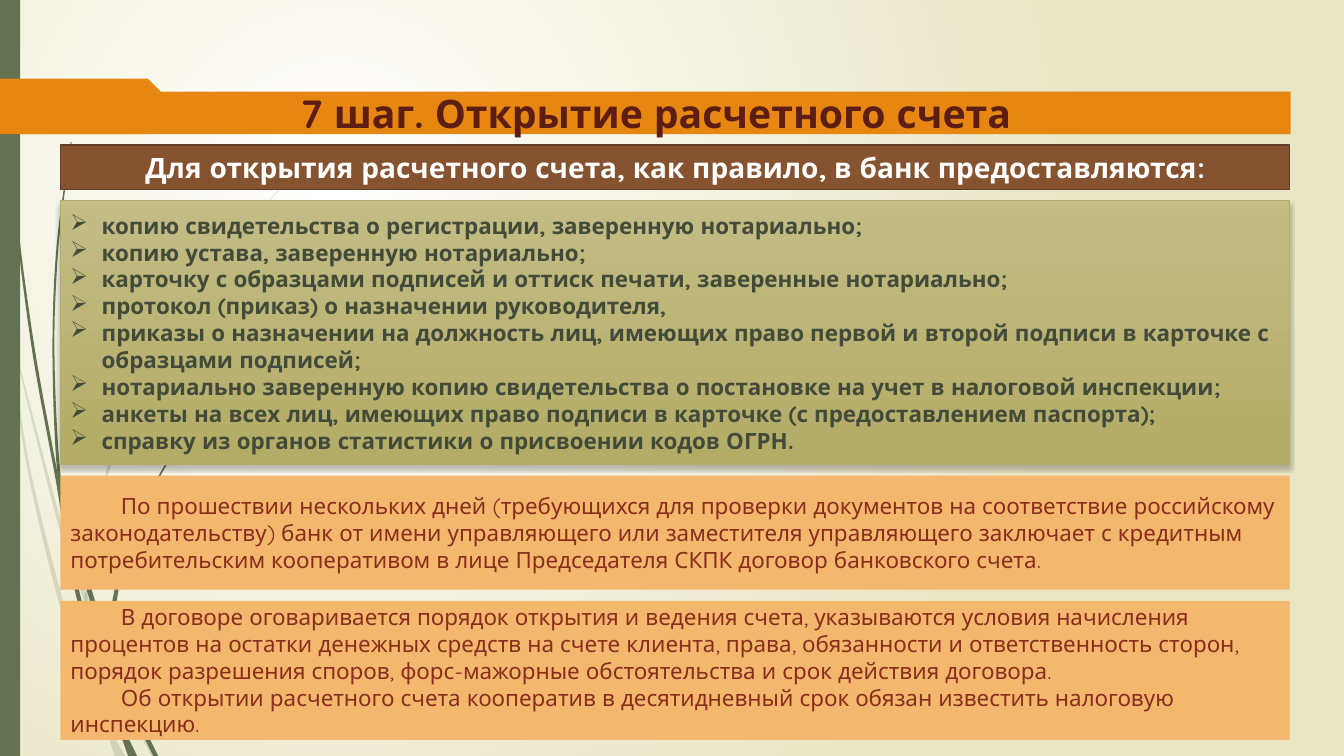
from lxml import etree
from pptx import Presentation
from pptx.dml.color import RGBColor
from pptx.enum.shapes import MSO_SHAPE
from pptx.enum.text import MSO_ANCHOR, PP_ALIGN
from pptx.oxml.ns import qn
from pptx.util import Emu, Inches, Pt

RECT = MSO_SHAPE.RECTANGLE
LEFT, CENTER = PP_ALIGN.LEFT, PP_ALIGN.CENTER
MIDDLE = MSO_ANCHOR.MIDDLE

WIDTH, HEIGHT = 13.33, 7.5
FONT, BULLET_FONT = "Quicksand", "OpenSymbol"
GREEN, ORANGE, PEACH = "647252", "E78712", "F4B76E"
BOX_LEFT, BOX_WIDTH, GAP = 0.6, 12.19, 0.11
FIRST_BOX_TOP = 1.44
UNITS, STEPS = 1000, 6

TITLE = "7 шаг. Открытие расчетного счета"
HEADING = "Для открытия расчетного счета, как правило, в банк предоставляются:"
DOCUMENTS = [
    "копию свидетельства о регистрации, заверенную нотариально;",
    "копию устава, заверенную нотариально;",
    "карточку с образцами подписей и оттиск печати, заверенные нотариально;",
    "протокол (приказ) о назначении руководителя,",
    "приказы о назначении на должность лиц, имеющих право первой и второй подписи в карточке с "
    "образцами подписей;",
    "нотариально заверенную копию свидетельства о постановке на учет в налоговой инспекции;",
    "анкеты на всех лиц, имеющих право подписи в карточке (с предоставлением паспорта);",
    "справку из органов статистики о присвоении кодов ОГРН.",
]
CONTRACT = [
    "По прошествии нескольких дней (требующихся для проверки документов на соответствие российскому "
    "законодательству) банк от имени управляющего или заместителя управляющего заключает с кредитным "
    "потребительским кооперативом в лице Председателя СКПК договор банковского счета.",
]
TERMS = [
    "В договоре оговаривается порядок открытия и ведения счета, указываются условия начисления "
    "процентов на остатки денежных средств на счете клиента, права, обязанности и ответственность "
    "сторон, порядок разрешения споров, форс-мажорные обстоятельства и срок действия договора.",
    "Об открытии расчетного счета кооператив в десятидневный срок обязан известить налоговую инспекцию.",
]

# Grass stems: joints (node numbers), then left edge, height and thickness at each node
PALE_STEMS = [
    ((1, 4), [(0, 2.82, 0.01), (0.11, 3.5, 0.01), (0.28, 4.7, 0.03), (0.65, 6.21, 0.05),
              (1.01, 7.14, 0.05), (1.14, 7.5, 0.1)]),
    ((2, 3), [(0.14, 3.45, 0.01), (0.58, 5.22, 0.04), (0.82, 5.92, 0.05), (0.88, 6.1, 0.05),
              (1.23, 6.94, 0.05), (1.5, 7.5, 0.05)]),
    ((), [(3.11, 1.53, 0.01), (2.68, 1.97, 0.01), (2.28, 2.44, 0.01), (1.58, 3.48, 0.02),
          (1.07, 4.61, 0.03), (0.85, 5.84, 0.03), (0.87, 5.96, 0.01)]),
]
DARK_STEMS = [
    ((4, 7), [(0.03, 0, 0.01), (0.06, 1.1, 0.02), (0.17, 2.33, 0.02), (0.33, 3.55, 0.03),
              (0.56, 4.8, 0.03), (0.68, 5.57, 0.04), (0.93, 6.59, 0.05), (1.17, 7.22, 0.06),
              (1.27, 7.5, 0.09)]),
    ((3, 4, 6), [(0.7, 1.41, 0.01), (0.56, 2.45, 0.02), (0.52, 3.49, 0.02), (0.56, 4.6, 0.03),
                 (0.64, 5.05, 0.04), (0.88, 5.92, 0.05), (1.06, 6.43, 0.05),
                 (1.32, 7.08, 0.05), (1.52, 7.5, 0.05)]),
    ((), [(2.6, 3.44, 0.01), (2.04, 4.05, 0.01), (1.56, 4.74, 0.02), (1.22, 5.51, 0.03),
          (1.06, 6.31, 0.05), (1.1, 6.41, 0.01)]),
]


def rgb(value):
    return RGBColor.from_string(value)


def add_xml(parent, tag, **attrs):
    return etree.SubElement(parent, qn(tag), attrs)


def set_gradient(fill, colors):
    fill.gradient()
    for stop, color in zip(fill.gradient_stops, colors):
        stop.color.rgb = rgb(color)


def paint(sp, color, line=None, line_width=1):
    sp.shadow.inherit = False
    sp.fill.solid()
    sp.fill.fore_color.rgb = rgb(color)
    sp.line.fill.background()
    if line:
        sp.line.color.rgb = rgb(line)
        sp.line.width = Pt(line_width)


def add_box(s, box, color, **line):
    sp = s.shapes.add_shape(RECT, *(Inches(v) for v in box))
    paint(sp, color, **line)
    return sp


def add_polygon(s, points, color):
    nodes = [(round(x * UNITS), round(y * UNITS)) for x, y in points]
    builder = s.shapes.build_freeform(*nodes[0], scale=Inches(1) / UNITS)
    builder.add_line_segments(nodes[1:], close=True)
    sp = builder.convert_to_shape(Emu(0), Emu(0))
    paint(sp, color)
    return sp


def smooth(nodes):
    """Return points on a Catmull-Rom curve through the nodes."""
    ends = [nodes[0], *nodes, nodes[-1]]
    points = []
    for span in zip(ends, ends[1:], ends[2:], ends[3:]):
        for t in (i / STEPS for i in range(STEPS)):
            points.append([q + t * (r - p) / 2 + t**2 * (2*p - 5*q + 4*r - u) / 2
                           + t**3 * (3*q - p - 3*r + u) / 2 for p, q, r, u in zip(*span)])
    return points + [nodes[-1]]


def add_stem(s, joints, nodes, opacity):
    curve = smooth(nodes)
    cuts = [0, *joints, len(nodes) - 1]
    for start, end in zip(cuts, cuts[1:]):
        part = curve[start * STEPS:end * STEPS + 1]
        sp = add_polygon(s, [(x, y) for x, y, _ in part]
                         + [(x + w, y) for x, y, w in reversed(part)], GREEN)
        color = sp.element.spPr.find(".//" + qn("a:srgbClr"))
        add_xml(color, "a:alpha", val=str(opacity * 1000))


def write(sp, lines, size, color, bold=False, align=LEFT, indent=0, bullet=None):
    tf = sp.text_frame
    tf.word_wrap = True
    tf.vertical_anchor = MIDDLE
    tf.text = "\n".join(lines)
    for p in tf.paragraphs:
        p.alignment = align
        pPr = p._p.get_or_add_pPr()
        pPr.set("indent", str(Inches(indent)))
        if bullet:
            pPr.set("marL", str(Inches(-indent)))
            add_xml(pPr, "a:buFont", typeface=BULLET_FONT)
            add_xml(pPr, "a:buChar", char=bullet)
        for r in p.runs:
            r.font.name, r.font.size, r.font.bold = FONT, Pt(size), bold
            r.font.color.rgb = rgb(color)


def draw_backdrop(s):
    set_gradient(s.background.fill, ("FFFFFF", "E8E6C4"))
    grad = s.element.find(".//" + qn("a:gradFill"))
    grad.remove(grad.find(qn("a:lin")))
    circle = add_xml(grad, "a:path", path="circle")
    add_xml(circle, "a:fillToRect", l="50000", t="50000", r="100000", b="100000")
    for stems, opacity in ((PALE_STEMS, 20), (DARK_STEMS, 100)):
        for joints, nodes in stems:
            add_stem(s, joints, nodes, opacity)
    add_box(s, (0, 0, 0.2, HEIGHT), GREEN)


def draw_title(s, box):
    x, y, w, h = box
    bottom, top, tip = y + h, y - 0.13, 1.74
    half = (bottom - top) / 2
    add_polygon(s, [(0, top), (tip - half, top), (tip, top + half), (tip - half, bottom), (0, bottom)], ORANGE)
    write(add_box(s, box, ORANGE), [TITLE], 28, "5C1E13", True, CENTER)


def draw_heading(s, box):
    sp = add_box(s, box, "865331", line="633D24", line_width=1.25)
    write(sp, [HEADING], 20, "FFFFFF", True, CENTER)


def draw_documents(s, box):
    sp = add_box(s, box, "C3BC85", line="B3AC6E", line_width=0.75)
    set_gradient(sp.fill, ("C3BC85", "B3AC66"))
    sp.fill.gradient_angle = 270
    effects = sp.element.spPr.find(qn("a:effectLst"))
    shadow = add_xml(effects, "a:outerShdw", blurRad=str(Pt(3)), dist=str(Pt(2)), dir="5400000", rotWithShape="0")
    add_xml(add_xml(shadow, "a:srgbClr", val="000000"), "a:alpha", val="25000")
    write(sp, DOCUMENTS, 16, "424A3A", True, indent=-0.31, bullet="➢")


def draw_note(s, box, lines):
    write(add_box(s, box, PEACH), lines, 16, "892D1D", indent=0.5)


def main():
    prs = Presentation()
    prs.slide_width, prs.slide_height = Inches(WIDTH), Inches(HEIGHT)
    s = prs.slides.add_slide(prs.slide_layouts[6])
    draw_backdrop(s)
    draw_title(s, (0.21, 0.91, 12.59, 0.42))
    top = FIRST_BOX_TOP
    for draw, height, *lines in ((draw_heading, 0.44), (draw_documents, 2.62),
                                 (draw_note, 1.13, CONTRACT), (draw_note, 1.38, TERMS)):
        draw(s, (BOX_LEFT, top, BOX_WIDTH, height), *lines)
        top += height + GAP
    prs.save("out.pptx")


if __name__ == "__main__":
    main()
